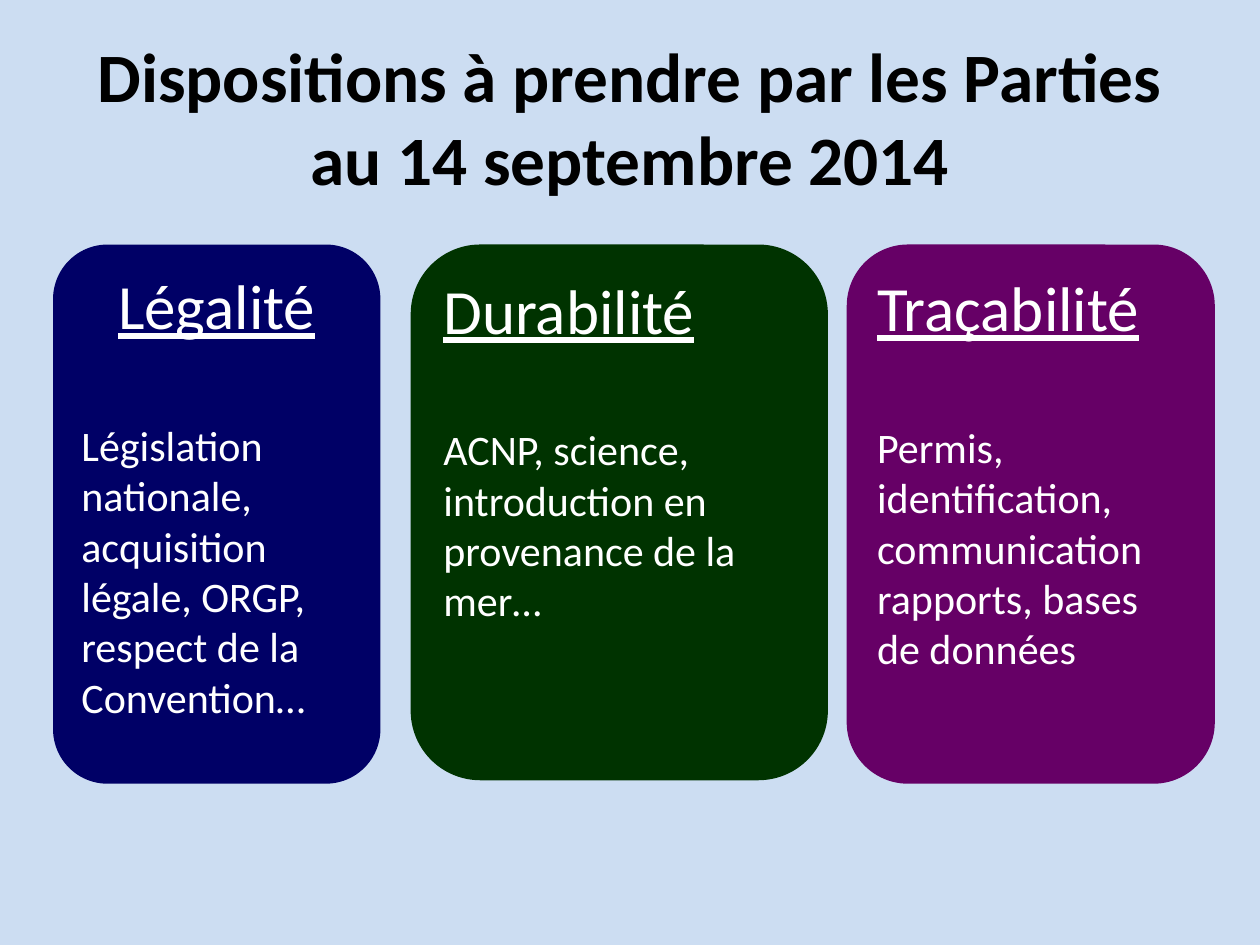
from pptx import Presentation
from pptx.dml.color import RGBColor
from pptx.enum.shapes import MSO_SHAPE
from pptx.enum.text import MSO_ANCHOR, PP_ALIGN
from pptx.util import Cm, Pt

FONT = "Calibri"
COLORS = {
    "background": "CCDDF2",
    "title": "000000",
    "text": "FFFFFF",
    "legality": "000066",
    "sustainability": "003300",
    "traceability": "660066",
}
CARD_TOP = 4.93

# left, width, height (cm), colour, heading alignment, heading, body
CARDS = [
    (1.07, 6.6, 10.87, "legality", PP_ALIGN.CENTER, "Légalité",
     "Législation nationale, acquisition légale, ORGP, respect de la Convention…"),
    (8.28, 8.41, 10.8, "sustainability", PP_ALIGN.LEFT, "Durabilité",
     "ACNP, science, introduction en provenance de la mer…"),
    (17.07, 7.42, 10.87, "traceability", PP_ALIGN.LEFT, "Traçabilité",
     "Permis, identification, communication rapports, bases de données"),
]


def color(name):
    return RGBColor.from_string(COLORS[name])


def style(p, size, color_name, align, bold=False, underline=False):
    p.alignment = align
    for r in p.runs:
        r.font.name = FONT
        r.font.size = Pt(size)
        r.font.bold = bold
        r.font.underline = underline
        r.font.color.rgb = color(color_name)


def add_title(s, text):
    tf = s.shapes.add_textbox(Cm(1.27), Cm(0.76), Cm(22.86), Cm(3.18)).text_frame
    tf.word_wrap = True
    tf.vertical_anchor = MSO_ANCHOR.MIDDLE
    tf.text = text
    style(tf.paragraphs[0], 39.6, "title", PP_ALIGN.CENTER, bold=True)


def add_card(s, left, width, height, fill, align, heading, body):
    """Rounded panel with an underlined heading above its body text."""
    sp = s.shapes.add_shape(MSO_SHAPE.ROUNDED_RECTANGLE, Cm(left), Cm(CARD_TOP),
                            Cm(width), Cm(height))
    sp.shadow.inherit = False
    sp.fill.solid()
    sp.fill.fore_color.rgb = color(fill)
    sp.line.fill.background()
    tf = sp.text_frame
    tf.word_wrap = True
    tf.vertical_anchor = MSO_ANCHOR.TOP
    tf.text = heading
    style(tf.paragraphs[0], 36, "text", align, underline=True)
    p = tf.add_paragraph()
    p.text = body
    p.space_before = Pt(44)
    style(p, 24, "text", PP_ALIGN.LEFT)


def main():
    prs = Presentation()
    prs.slide_width, prs.slide_height = Cm(25.4), Cm(19.05)
    s = prs.slides.add_slide(prs.slide_layouts[6])
    s.background.fill.solid()
    s.background.fill.fore_color.rgb = color("background")
    add_title(s, "Dispositions à prendre par les Parties au 14 septembre 2014")
    for card in CARDS:
        add_card(s, *card)
    prs.save("out.pptx")


if __name__ == "__main__":
    main()
